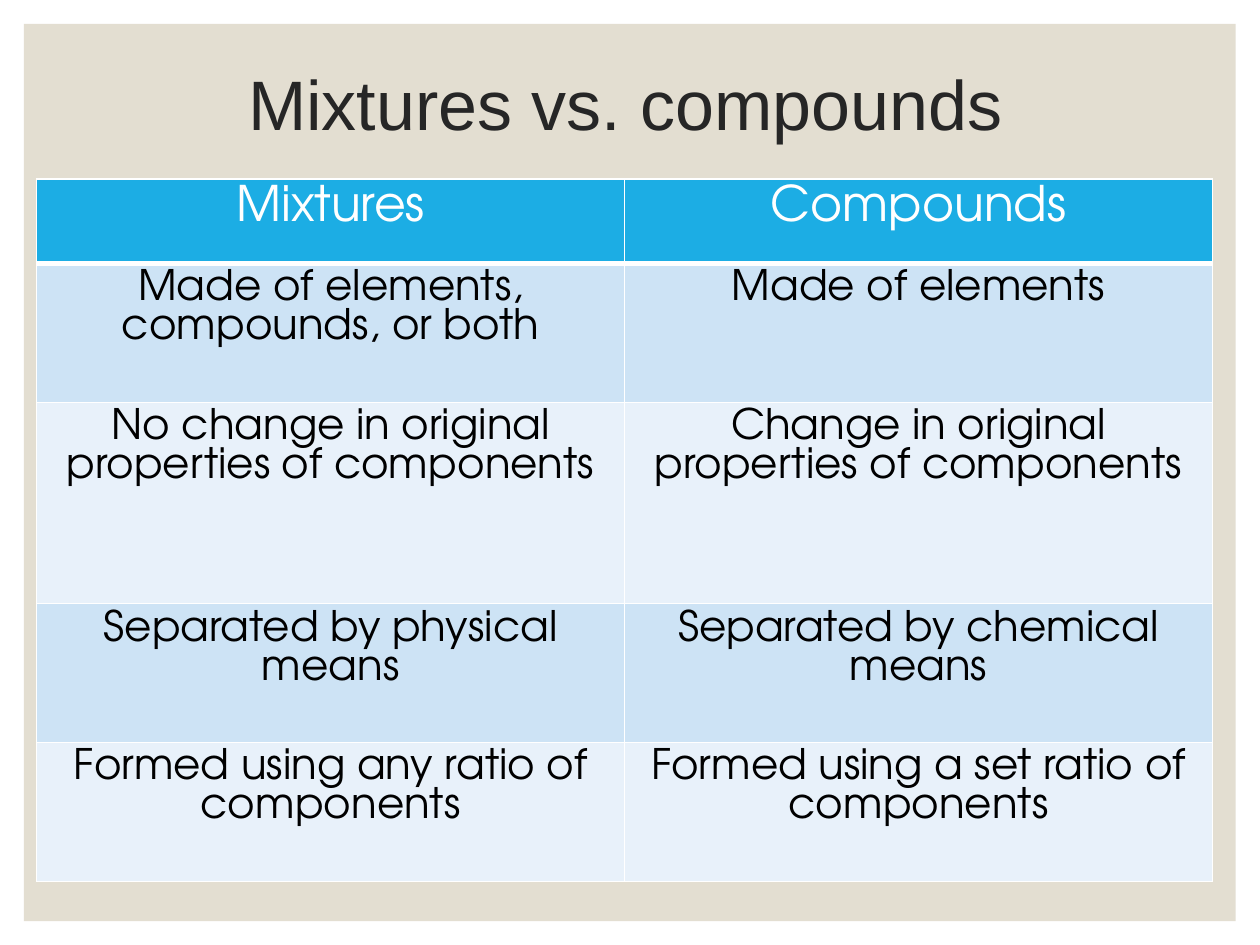
"""Build a slide with a table comparing mixtures and compounds."""
from dataclasses import dataclass

import lxml.etree
import pptx
import pptx.dml.color
import pptx.enum.shapes
import pptx.enum.text
import pptx.oxml.ns
import pptx.util
from pptx.util import Cm


@dataclass(frozen=True)
class Theme:
    panel: str = "E3DED1"
    title_text: str = "262626"
    header: str = "1CADE4"
    header_text: str = "FFFFFF"
    body_text: str = "000000"
    bands: tuple = ("CDE3F5", "E8F1FA")
    border: str = "FFFFFF"
    title_font: str = "Arial"
    table_font: str = "TeX Gyre Adventor"
    title_size: int = 40
    header_size: int = 28
    body_size: int = 24


def write_centred(text_frame, text, font_name, size, color):
    text_frame.text = text
    paragraph = text_frame.paragraphs[0]
    paragraph.alignment = pptx.enum.text.PP_ALIGN.CENTER
    font = paragraph.runs[0].font
    font.name = font_name
    font.size = pptx.util.Pt(size)
    font.bold = False
    font.color.rgb = pptx.dml.color.RGBColor.from_string(color)


def add_borders(cell, color, bottom_width):
    properties = cell._tc.get_or_add_tcPr()
    widths = {"a:lnL": 1, "a:lnR": 1, "a:lnT": 1, "a:lnB": bottom_width}
    for position, (tag, width) in enumerate(widths.items()):
        line = lxml.etree.Element(pptx.oxml.ns.qn(tag), w=str(pptx.util.Pt(width)))
        fill = lxml.etree.SubElement(line, pptx.oxml.ns.qn("a:solidFill"))
        lxml.etree.SubElement(fill, pptx.oxml.ns.qn("a:srgbClr"), val=color)
        properties.insert(position, line)


theme = Theme()
presentation = pptx.Presentation()
presentation.slide_width = Cm(25.4)
presentation.slide_height = Cm(19.05)
slide = presentation.slides.add_slide(presentation.slide_layouts[6])

panel = slide.shapes.add_shape(
    pptx.enum.shapes.MSO_SHAPE.RECTANGLE, Cm(0.48), Cm(0.48), Cm(24.43), Cm(18.09)
)
panel.shadow.inherit = False
panel.fill.solid()
panel.fill.fore_color.rgb = pptx.dml.color.RGBColor.from_string(theme.panel)
panel.line.fill.background()

title = slide.shapes.add_textbox(Cm(1.93), Cm(0.64), Cm(21.34), Cm(3.05))
title.text_frame.word_wrap = True
title.text_frame.vertical_anchor = pptx.enum.text.MSO_ANCHOR.MIDDLE
write_centred(title.text_frame, "Mixtures vs. compounds",
              theme.title_font, theme.title_size, theme.title_text)
title.text_frame.paragraphs[0].line_spacing = 0.9

comparison = [
    ("Mixtures", "Compounds"),
    ("Made of elements, compounds, or both", "Made of elements"),
    ("No change in original properties of components",
     "Change in original properties of components"),
    ("Separated by physical means", "Separated by chemical means"),
    ("Formed using any ratio of components",
     "Formed using a set ratio of components"),
]
row_heights = [1.7, 2.8, 4.06, 2.8, 2.8]
table = slide.shapes.add_table(
    len(comparison), 2, Cm(0.74), Cm(3.61), Cm(23.7), Cm(sum(row_heights))
).table

for row_index, (texts, height) in enumerate(zip(comparison, row_heights)):
    table.rows[row_index].height = Cm(height)
    is_header = row_index == 0
    fill_color = theme.header if is_header else theme.bands[(row_index - 1) % 2]
    text_color = theme.header_text if is_header else theme.body_text
    size = theme.header_size if is_header else theme.body_size
    for column_index, text in enumerate(texts):
        cell = table.cell(row_index, column_index)
        cell.fill.solid()
        cell.fill.fore_color.rgb = pptx.dml.color.RGBColor.from_string(fill_color)
        write_centred(cell.text_frame, text, theme.table_font, size, text_color)
        add_borders(cell, theme.border, 3 if is_header else 1)

presentation.save("out.pptx")
